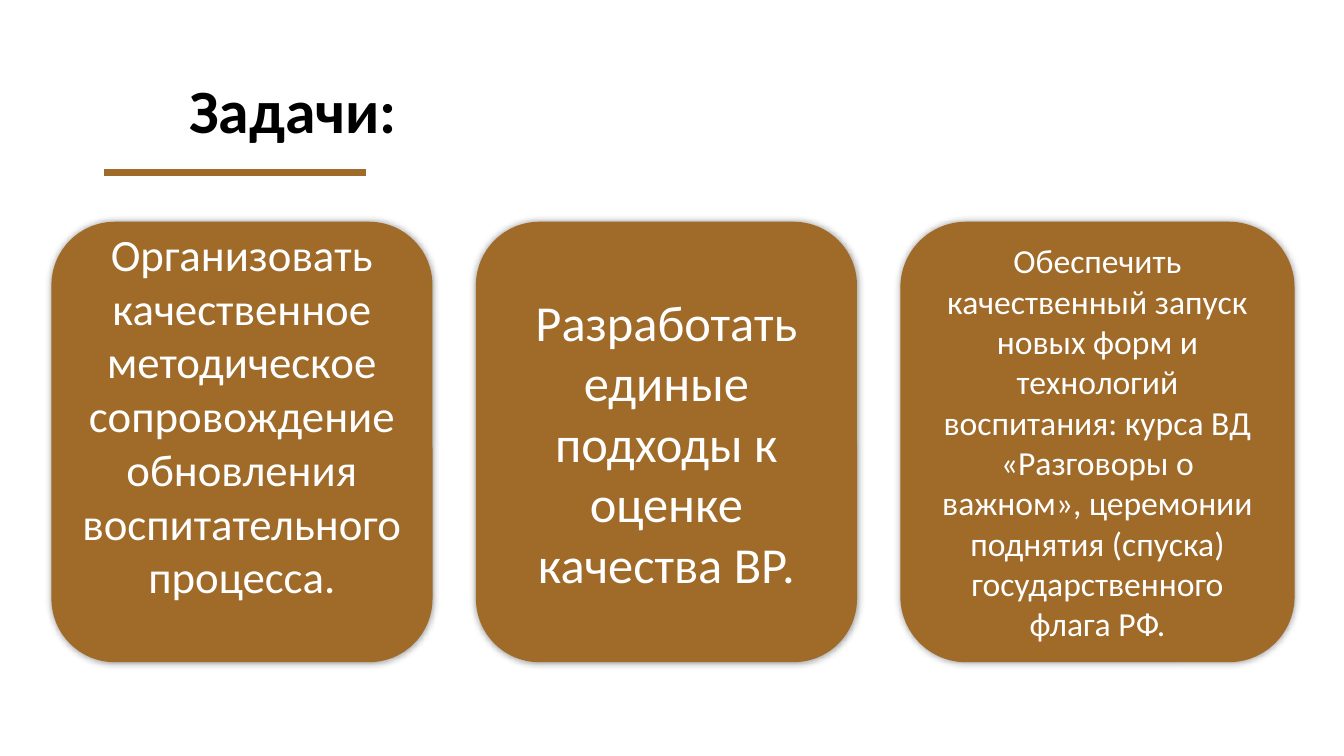
import pptx
import pptx.util
import pptx.dml.color
import pptx.enum.shapes
import pptx.enum.text
import pptx.oxml
import pptx.oxml.ns
from lxml import etree

Inches, Pt = pptx.util.Inches, pptx.util.Pt
COLORS = {"brown": "A06A29", "white": "FFFFFF", "black": "000000"}
FONT = "Calibri"

# Card text, width, text size, bottom inset
CARDS = [
    ("Организовать качественное методическое сопровождение обновления "
     "воспитательного процесса.", 3.78, 32, 0.59),
    ("Разработать единые подходы к оценке качества ВР.", 3.78, 36, 0.05),
    ("Обеспечить качественный запуск новых форм и технологий воспитания: "
     "курса ВД «Разговоры о важном», церемонии поднятия (спуска) "
     "государственного флага РФ.", 3.91, 24, 0.05),
]
CARD_GAP = 0.43


def rgb(name):
    return pptx.dml.color.RGBColor.from_string(COLORS[name])


def add_text(sp, text, size, color, bold=False, align="LEFT", spacing=None, bottom=0.05):
    tf = sp.text_frame
    tf.word_wrap = True
    tf.margin_bottom = Inches(bottom)
    tf.vertical_anchor = pptx.enum.text.MSO_ANCHOR.MIDDLE
    p = tf.paragraphs[0]
    p.alignment = pptx.enum.text.PP_ALIGN[align]
    if spacing:
        p.line_spacing = spacing
    r = p.add_run()
    r.text = text
    r.font.name = FONT
    r.font.size = Pt(size)
    r.font.bold = bold
    r.font.color.rgb = rgb(color)


def add_glow_shadow(sp, blur, opacity):
    sp.shadow.inherit = False
    effects = sp._element.spPr.find(pptx.oxml.ns.qn("a:effectLst"))
    effects.append(pptx.oxml.parse_xml(
        f'<a:outerShdw {pptx.oxml.ns.nsdecls("a")} blurRad="{Pt(blur)}" dist="0" '
        f'dir="0" algn="ctr" rotWithShape="0"><a:srgbClr val="{COLORS["black"]}">'
        f'<a:alpha val="{opacity * 1000}"/></a:srgbClr></a:outerShdw>'))


def add_header(s, x, y, w, h):
    # Title
    tb = s.shapes.add_textbox(Inches(x), Inches(y), Inches(w), Inches(h))
    add_text(tb, "Задачи:", 44, "black", bold=True, spacing=0.9)
    # Underline
    line_x, line_y = Inches(x - 0.75), Inches(y + 1.31)
    line = s.shapes.add_connector(pptx.enum.shapes.MSO_CONNECTOR.STRAIGHT,
                                  line_x, line_y, line_x + Inches(2.6), line_y)
    line.line.color.rgb = rgb("brown")
    line.line.width = Pt(5)
    etree.SubElement(line._element.spPr, pptx.oxml.ns.qn("a:effectLst"))


def add_card(s, x, y, w, h, text, size, bottom):
    sp = s.shapes.add_shape(pptx.enum.shapes.MSO_SHAPE.ROUNDED_RECTANGLE,
                            Inches(x), Inches(y), Inches(w), Inches(h))
    sp.fill.solid()
    sp.fill.fore_color.rgb = rgb("brown")
    sp.line.fill.background()
    add_glow_shadow(sp, blur=5, opacity=40)
    add_text(sp, text, size, "white", align="CENTER", bottom=bottom)


def add_cards(s, x, y, h):
    for text, w, size, bottom in CARDS:
        add_card(s, x, y, w, h, text, size, bottom)
        x += w + CARD_GAP


def main():
    prs = pptx.Presentation()
    prs.slide_width, prs.slide_height = Inches(13.33), Inches(7.5)
    s = prs.slides.add_slide(prs.slide_layouts[6])
    add_header(s, 1.78, 0.4, 10.64, 1.45)
    add_cards(s, 0.51, 2.2, 4.37)
    prs.save("out.pptx")


if __name__ == "__main__":
    main()
